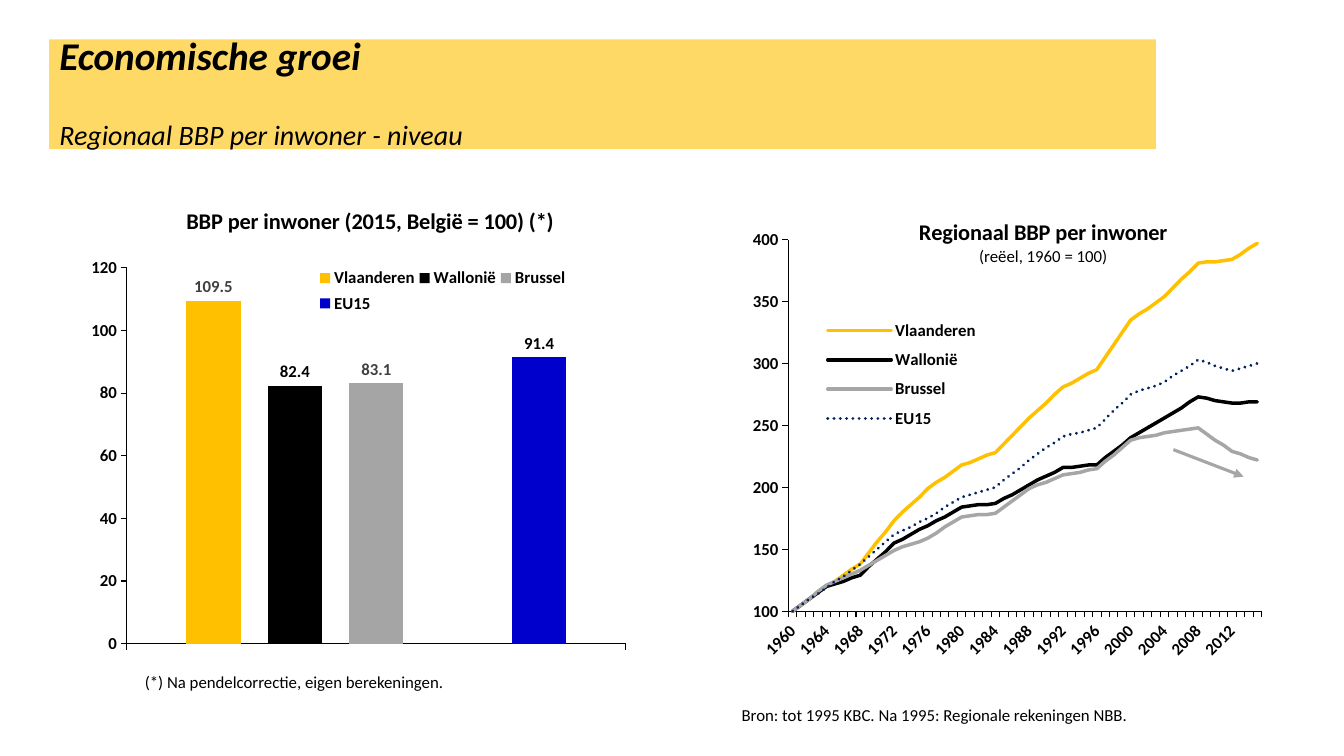
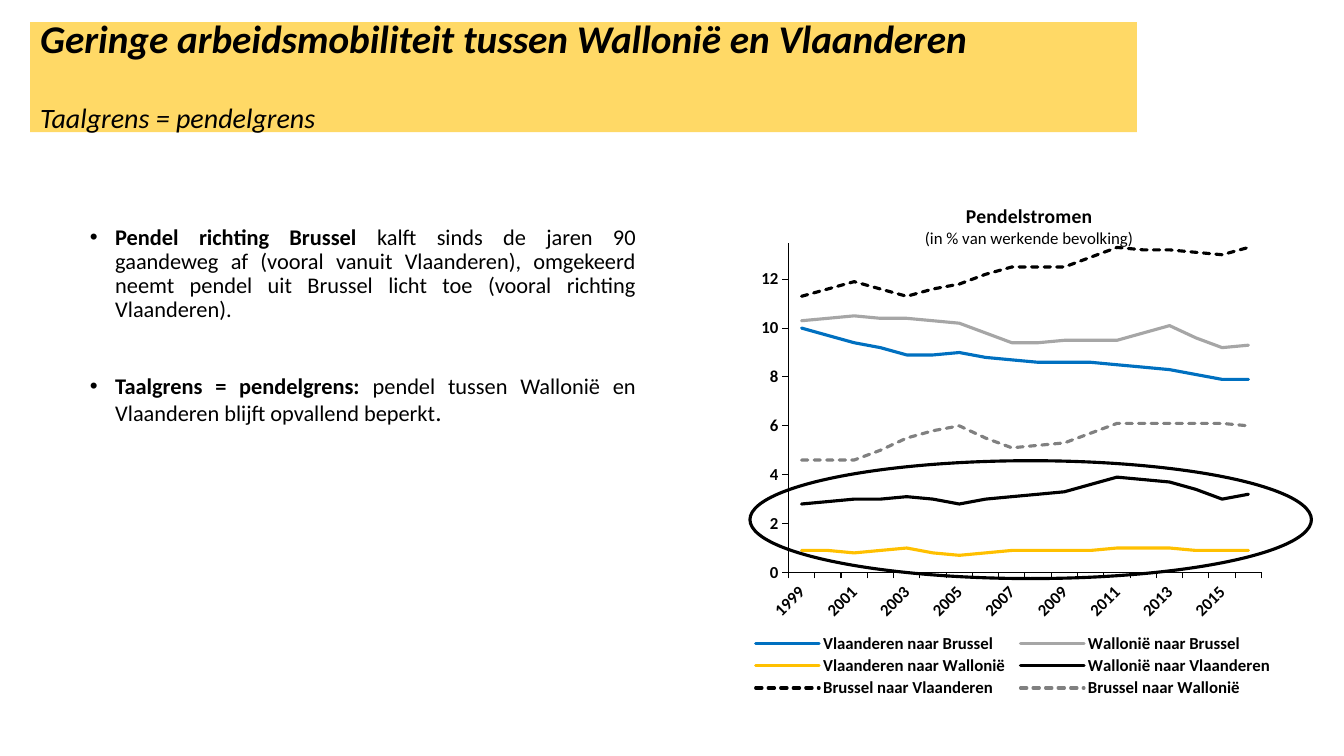
"""Two slides on regional growth and commuting in Belgium."""
from lxml import etree
from pptx import Presentation
from pptx.chart.data import CategoryChartData
from pptx.dml.color import RGBColor
from pptx.enum.chart import XL_CHART_TYPE, XL_LABEL_POSITION, XL_LEGEND_POSITION, XL_TICK_LABEL_POSITION, XL_TICK_MARK
from pptx.enum.dml import MSO_LINE
from pptx.enum.shapes import MSO_CONNECTOR, MSO_SHAPE
from pptx.enum.text import MSO_ANCHOR, MSO_AUTO_SIZE, PP_ALIGN
from pptx.oxml.ns import qn
from pptx.util import Cm, Pt

FONT = "Calibri"
BLACK = RGBColor(0x00, 0x00, 0x00)
GOLD = RGBColor(0xFF, 0xC0, 0x00)
BAND = RGBColor(0xFF, 0xD9, 0x66)
GREY = RGBColor(0xA6, 0xA6, 0xA6)
BAR_GREY = RGBColor(0xA5, 0xA5, 0xA5)
MID_GREY = RGBColor(0x80, 0x80, 0x80)
DARK_GREY = RGBColor(0x40, 0x40, 0x40)
BLUE = RGBColor(0x00, 0x70, 0xC0)
EU_BLUE = RGBColor(0x00, 0x00, 0xCC)
NAVY = RGBColor(0x00, 0x20, 0x60)
DOT, DASH = MSO_LINE.ROUND_DOT, MSO_LINE.SQUARE_DOT
THIN, MEDIUM, THICK = 0.75, 2.25, 2.5

LEVEL = {
    "kind": XL_CHART_TYPE.COLUMN_CLUSTERED,
    "box": (2.08, 4.83, 13.97, 12.8),
    "title": ["BBP per inwoner (2015, België = 100) (*)"], "title_size": 16,
    "title_at": (0.18, 0.02), "plot": (0.08, 0.15, 0.9, 0.74), "legend": (0.42, 0.14, 0.46, 0.11),
    "scale": (0, 120, 20), "cats": ["1"],
    "series": [
        ("Vlaanderen", GOLD, DARK_GREY, [109.5]),
        ("Wallonië", BLACK, BLACK, [82.4]),
        ("Brussel", BAR_GREY, DARK_GREY, [83.1]),
        ("Series 4", GOLD, None, [None]),
        ("EU15", EU_BLUE, BLACK, [91.4]),
    ],
}
GROWTH = {
    "kind": XL_CHART_TYPE.LINE,
    "box": (17.27, 4.37, 15.29, 12.83),
    "title": ["Regionaal BBP per inwoner", "(reëel, 1960 = 100)"], "title_size": 16,
    "title_at": (0.38, 0.08), "plot": (0.17, 0.13, 0.78, 0.73), "legend": (0.22, 0.27, 0.28, 0.25),
    "scale": (100, 400, 50), "cats": [str(y) for y in range(1960, 2016)], "step": 4, "digits": 0,
    "series": [
        ("Vlaanderen ", GOLD, THICK, None,
         [100, 120, 138, 173, 199, 218, 228, 256, 281, 295, 335, 354, 381, 384, 397]),
        ("Wallonië", BLACK, THICK, None,
         [100, 120, 129, 155, 169, 184, 187, 202, 216, 218, 240, 256, 273, 268, 269]),
        ("Brussel", GREY, THICK, None,
         [100, 121, 133, 149, 159, 176, 179, 199, 210, 215, 238, 244, 248, 229, 222]),
        ("EU15", NAVY, MEDIUM, DOT,
         [100, 119, 138, 162, 175, 192, 200, 222, 241, 248, 275, 285, 303, 294, 300]),
    ],
}
COMMUTING = {
    "kind": XL_CHART_TYPE.LINE,
    "box": (17.27, 4.37, 15.29, 13.41),
    "title": ["Pendelstromen", "(in % van werkende bevolking)"], "title_size": 14,
    "title_at": (0.39, 0.05), "plot": (0.17, 0.13, 0.78, 0.62), "legend": (0.1, 0.86, 0.88, 0.13),
    "scale": (0, 13.5, 2), "cats": [str(y) for y in range(1999, 2017)], "step": 2, "digits": 1,
    "series": [
        ("Vlaanderen naar Brussel", BLUE, MEDIUM, None, [10, 9.4, 8.9, 9, 8.7, 8.6, 8.5, 8.3, 7.9, 7.9]),
        ("Wallonië naar Brussel", GREY, MEDIUM, None,
         [10.3, 10.5, 10.4, 10.2, 9.4, 9.5, 9.5, 10.1, 9.2, 9.3]),
        ("Vlaanderen naar Wallonië", GOLD, MEDIUM, None, [0.9, 0.8, 1, 0.7, 0.9, 0.9, 1, 1, 0.9, 0.9]),
        ("Wallonië naar Vlaanderen", BLACK, MEDIUM, None, [2.8, 3, 3.1, 2.8, 3.1, 3.3, 3.9, 3.7, 3, 3.2]),
        ("Brussel naar Vlaanderen", BLACK, MEDIUM, DASH,
         [11.3, 11.9, 11.3, 11.8, 12.5, 12.5, 13.3, 13.2, 13, 13.3]),
        ("Brussel naar Wallonië", MID_GREY, MEDIUM, DASH, [4.6, 4.6, 5.5, 6, 5.1, 5.3, 6.1, 6.1, 6.1, 6]),
    ],
}
NOTES = [
    ("Bron: tot 1995 KBC. Na 1995: Regionale rekeningen NBB.", (18.44, 17.63, 10.34, 0.76)),
    ("(*) Na pendelcorrectie, eigen berekeningen.", (3.4, 16.81, 8.28, 0.76)),
]
BULLETS = [
    [("Pendel richting Brussel", True, 16),
     (" kalft sinds de jaren 90 gaandeweg af (vooral vanuit Vlaanderen), omgekeerd neemt pendel uit "
      "Brussel licht toe (vooral richting Vlaanderen).", False, 16)],
    [("Taalgrens = pendelgrens: ", True, 16),
     ("pendel tussen Wallonië en Vlaanderen blijft opvallend beperkt", False, 16), (".", False, 18)],
]


def style(font, size, bold=False, color=BLACK, italic=None):
    font.name, font.size, font.bold, font.italic = FONT, Pt(size), bold, italic
    font.color.rgb = color


def add_run(p, text, *args, **kwargs):
    r = p.add_run()
    r.text = text
    style(r.font, *args, **kwargs)


def put(sp, box):
    sp.left, sp.top, sp.width, sp.height = (Cm(v) for v in box)


def next_paragraph(tf, i):
    return tf.add_paragraph() if i else tf.paragraphs[0]


def new_slide(prs, layout, left, top, heading, subheading):
    s = prs.slides.add_slide(prs.slide_layouts[layout])
    sp = s.shapes.title
    put(sp, (left, top, 27.89, 2.77))
    sp.fill.solid()
    sp.fill.fore_color.rgb = BAND
    tf = sp.text_frame
    tf.auto_size, tf.vertical_anchor, tf.word_wrap = MSO_AUTO_SIZE.NONE, MSO_ANCHOR.MIDDLE, True
    for i, (text, size) in enumerate([(heading, 28), (subheading, 20)]):
        p = next_paragraph(tf, i)
        p.alignment, p.line_spacing, p.space_before = PP_ALIGN.LEFT, 0.9, Pt(30 * i)
        add_run(p, text, size, bold=not i, italic=True)
    return s


def yearly(knots, count, step, digits):
    values = []
    for i in range(count):
        k = min(i // step, len(knots) - 2)
        start, end = k * step, min((k + 1) * step, count - 1)
        share = (i - start) / (end - start)
        values.append(round(knots[k] + share * (knots[k + 1] - knots[k]), digits))
    return values


def set_layout(parent, frame, inner=False):
    for old in parent.findall(qn("c:layout")):
        parent.remove(old)
    layout = etree.Element(qn("c:layout"))
    manual = etree.SubElement(layout, qn("c:manualLayout"))
    values = [("layoutTarget", "inner")] if inner else []
    values += [("xMode", "edge"), ("yMode", "edge"), *zip("xywh", frame)]
    for tag, value in values:
        etree.SubElement(manual, qn("c:" + tag)).set("val", str(value))
    overlay = parent.find(qn("c:overlay"))
    if overlay is None:
        parent.insert(0, layout)
    else:
        overlay.addprevious(layout)


def format_axis(axis):
    axis.has_major_gridlines = False
    axis.major_tick_mark, axis.minor_tick_mark = XL_TICK_MARK.OUTSIDE, XL_TICK_MARK.NONE
    axis.format.line.color.rgb = BLACK
    axis.format.line.width = Pt(THIN)
    style(axis.tick_labels.font, 12, bold=True)


def add_chart(s, info):
    data = CategoryChartData()
    data.categories = info["cats"]
    for name, *_, values in info["series"]:
        if "step" in info:
            values = yearly(values, len(info["cats"]), info["step"], info["digits"])
        data.add_series(name, values)
    chart = s.shapes.add_chart(info["kind"], *(Cm(v) for v in info["box"]), data).chart
    style(chart.font, 10)

    chart.has_title = True
    tf = chart.chart_title.text_frame
    for i, text in enumerate(info["title"]):
        add_run(next_paragraph(tf, i), text, 12 if i else info["title_size"], bold=not i)
    set_layout(chart.chart_title._element, info["title_at"])

    chart.has_legend = True
    legend = chart.legend
    legend.position, legend.include_in_layout = XL_LEGEND_POSITION.BOTTOM, False
    style(legend.font, 12, bold=True)
    set_layout(legend._element, info["legend"])
    set_layout(chart._chartSpace.chart.plotArea, info["plot"], inner=True)

    format_axis(chart.category_axis)
    format_axis(chart.value_axis)
    val = chart.value_axis
    val.minimum_scale, val.maximum_scale, val.major_unit = info["scale"]
    val.tick_labels.number_format, val.tick_labels.number_format_is_linked = "General", False
    chart.plots[0].vary_by_categories = False
    return chart


def add_column_chart(s, info):
    chart = add_chart(s, info)
    plot = chart.plots[0]
    plot.gap_width, plot.overlap = 219, -50
    chart.category_axis.tick_label_position = XL_TICK_LABEL_POSITION.NONE
    for i, (ser, (_, color, label_color, _)) in enumerate(zip(plot.series, info["series"])):
        ser.format.fill.solid()
        ser.format.fill.fore_color.rgb = color
        if label_color is None:
            entry = etree.Element(qn("c:legendEntry"))
            etree.SubElement(entry, qn("c:idx")).set("val", str(i))
            etree.SubElement(entry, qn("c:delete")).set("val", "1")
            chart.legend._element.find(qn("c:legendPos")).addnext(entry)
            continue
        labels = ser.data_labels
        labels.show_value, labels.position = True, XL_LABEL_POSITION.OUTSIDE_END
        labels.number_format, labels.number_format_is_linked = "#,##0.0", False
        style(labels.font, 12, bold=True, color=label_color)


def add_line_chart(s, info):
    chart = add_chart(s, info)
    axis = chart.category_axis._element
    axis.find(qn("c:txPr")).find(qn("a:bodyPr")).set("rot", "-2700000")
    skip = etree.Element(qn("c:tickLblSkip"))
    skip.set("val", str(info["step"]))
    axis.find(qn("c:noMultiLvlLbl")).addprevious(skip)
    for ser, (_, color, width, dash, _) in zip(chart.plots[0].series, info["series"]):
        ser.smooth = False
        line = ser.format.line
        line.color.rgb, line.width = color, Pt(width)
        if dash:
            line.dash_style = dash
        ser._element.find(qn("c:spPr")).find(qn("a:ln")).set("cap", "rnd")


def add_arrow(s, x1, y1, x2, y2):
    cx = s.shapes.add_connector(MSO_CONNECTOR.STRAIGHT, Cm(x1), Cm(y1), Cm(x2), Cm(y2))
    cx.line.color.rgb, cx.line.width = GREY, Pt(MEDIUM)
    etree.SubElement(cx.line._get_or_add_ln(), qn("a:tailEnd")).set("type", "triangle")
    etree.SubElement(cx._element.spPr, qn("a:effectLst"))


def add_note(s, text, box):
    tf = s.shapes.add_textbox(*(Cm(v) for v in box)).text_frame
    tf.word_wrap = False
    add_run(tf.paragraphs[0], text, 12)


def fill_bullets(sp):
    put(sp, (2.01, 5.56, 14.27, 12.09))
    tf = sp.text_frame
    tf.auto_size, tf.vertical_anchor = MSO_AUTO_SIZE.NONE, MSO_ANCHOR.TOP
    for i, runs in enumerate(BULLETS):
        p = next_paragraph(tf, i)
        p.alignment, p.line_spacing, p.space_before = PP_ALIGN.JUSTIFY, 0.9, Pt(38 * i)
        pPr = p._p.get_or_add_pPr()
        pPr.set("marL", str(Cm(0.64)))
        pPr.set("indent", str(-Cm(0.64)))
        etree.SubElement(pPr, qn("a:buFont")).set("typeface", "Arial")
        etree.SubElement(pPr, qn("a:buChar")).set("char", "•")
        for text, bold, size in runs:
            add_run(p, text, size, bold=bold)


def main():
    prs = Presentation()
    prs.slide_width, prs.slide_height = Cm(33.87), Cm(19.05)

    s = new_slide(prs, 5, 1.24, 0.99, "Economische groei", "Regionaal BBP per inwoner - niveau")
    add_column_chart(s, LEVEL)
    add_line_chart(s, GROWTH)
    for text, box in NOTES:
        add_note(s, text, box)
    add_arrow(s, 29.57, 11.33, 31.34, 12.01)

    s = new_slide(prs, 1, 0.76, 0.56, "Geringe arbeidsmobiliteit tussen Wallonië en Vlaanderen",
                  "Taalgrens = pendelgrens")
    fill_bullets(s.placeholders[1])
    add_line_chart(s, COMMUTING)
    ring = s.shapes.add_shape(MSO_SHAPE.OVAL, Cm(18.9), Cm(11.61), Cm(14.15), Cm(2.97))
    ring.shadow.inherit = False
    ring.fill.background()
    ring.line.color.rgb, ring.line.width = BLACK, Pt(MEDIUM)

    prs.save("out.pptx")


if __name__ == "__main__":
    main()
